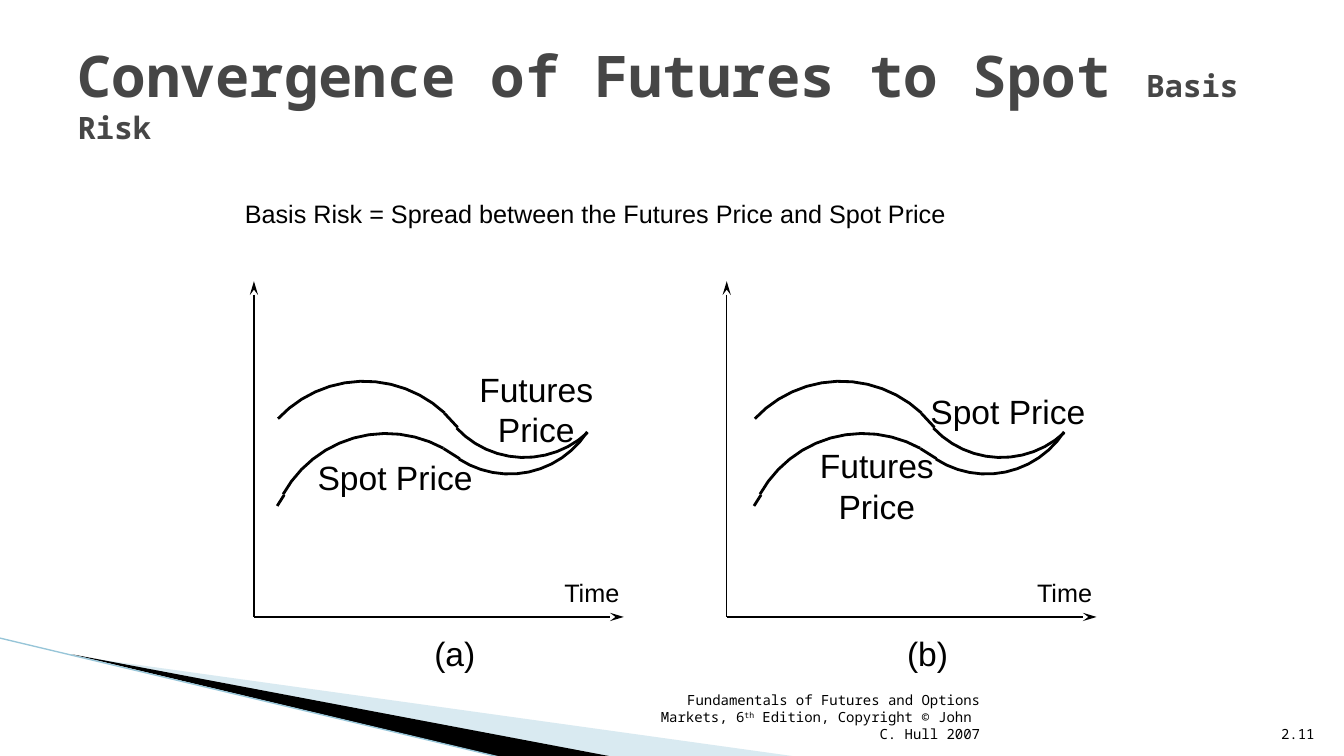
from math import cos, pi, sin
from lxml.etree import SubElement
from pptx import Presentation
from pptx.dml.color import RGBColor
from pptx.enum.shapes import MSO_CONNECTOR as Link
from pptx.enum.text import MSO_ANCHOR as Anchor, MSO_AUTO_SIZE as Fit, PP_ALIGN as Align
from pptx.oxml.ns import qn
from pptx.util import Pt

BLACK = RGBColor(0x00, 0x00, 0x00)
GREY = RGBColor(0x46, 0x46, 0x46)
PALE = RGBColor(0xA0, 0xCB, 0xDC)
TEAL = RGBColor(0x97, 0xC5, 0xD8)
SANS = "Arial"
MONO = "Noto Sans Mono"

ARCS = [
    (18, 54, 84.2, 313, True),
    (141.8, 73.4, 66.2, 47, False),
    (19.4, 93.6, 84.2, 299, True),
    (142.6, 84.2, 66.2, 33, False),
]
JOINS = [
    (119.5, 94.3, 128.9, 104.4),
    (118.8, 119.5, 130.3, 126.7),
    (5, 152.6, 0, 160.5),
]


def add_run(para, text, size, font=SANS, color=BLACK, bold=False):
    run = para.add_run()
    run.text = text
    run.font.size = Pt(size)
    run.font.name = font
    run.font.bold = bold
    run.font.color.rgb = color
    return run


def add_text(slide, box, lines, size, align=Align.LEFT, font=SANS, wrap=False, anchor=Anchor.TOP):
    frame = slide.shapes.add_textbox(*map(Pt, box)).text_frame
    frame.word_wrap = wrap
    frame.vertical_anchor = anchor
    if anchor == Anchor.TOP:
        frame.auto_size = Fit.SHAPE_TO_FIT_TEXT
    for i, line in enumerate(lines):
        para = frame.add_paragraph() if i else frame.paragraphs[0]
        para.alignment = align
        add_run(para, line, size, font)
    return frame


def add_line(shapes, start, end, color, width, arrow=None):
    line = shapes.add_connector(Link.STRAIGHT, *map(Pt, start + end))
    line.line.color.rgb = color
    line.line.width = Pt(width)
    if arrow:
        SubElement(line.line._get_or_add_ln(), qn(arrow), type="stealth", w="med", len="lg")
    SubElement(line._element.spPr, qn("a:effectLst"))


def add_path(shapes, points, closed):
    points = [(Pt(x), Pt(y)) for x, y in points]
    pen = shapes.build_freeform(*points[0])
    pen.add_line_segments(points[1:], close=closed)
    shape = pen.convert_to_shape()
    shape.shadow.inherit = False
    return shape


def add_arc(shapes, left, top, size, turn, crest, steps=12):
    points = []
    for i in range(steps + 1):
        angle = i / steps * pi / 2
        rise = size * cos(angle)
        points.append((left + size * sin(angle), top + (size - rise if crest else rise)))
    arc = add_path(shapes, points, False)
    arc.rotation = turn
    arc.fill.background()
    arc.line.color.rgb = BLACK
    arc.line.width = Pt(2)


def draw_decor(slide, box):
    left, top, width, height = box
    base = top + height
    wedges = [
        (PALE, 40, (52.6, 72.2), 571, 437.8),
        (BLACK, 100, (51.1, 73.4), 438.5, 357.1),
    ]
    for color, alpha, (x, rise), far, near in wedges:
        points = [(left + x, base - rise), (left + far, base), (left + near, base)]
        wedge = add_path(slide.shapes, points, True)
        wedge.fill.solid()
        wedge.fill.fore_color.rgb = color
        wedge.line.fill.background()
        if alpha < 100:
            tint = wedge._element.spPr.find(qn("a:solidFill"))[0]
            SubElement(tint, qn("a:alpha"), val=str(alpha * 1000))
    add_line(slide.shapes, (left, top), (left + 356.4, base), TEAL, 0.95)


def draw_title(slide, box):
    title = slide.shapes.title
    title.left, title.top, title.width, title.height = map(Pt, box)
    frame = title.text_frame
    frame.auto_size = Fit.NONE
    frame.word_wrap = True
    frame.vertical_anchor = Anchor.MIDDLE
    para = frame.paragraphs[0]
    para.alignment = Align.LEFT
    add_run(para, "Convergence of Futures to Spot ", 41, MONO, GREY, True)
    add_run(para, "Basis Risk", 22, MONO, GREY, True)


def draw_panel(slide, box, shift, mark, labels):
    left, top, width, height = box
    base = top + height
    add_line(slide.shapes, (left, top), (left, base), BLACK, 1, "a:headEnd")
    add_line(slide.shapes, (left, base), (left + width, base), BLACK, 1, "a:tailEnd")
    add_text(slide, (left + 214.6, base - 31.7, 54.7, 28.8), ["Time"], 18)
    add_text(slide, (left + 121.7, base + 7.9, 44.6, 36.7), [mark], 24)
    shapes = slide.shapes.add_group_shape().shapes
    start = left + shift
    for x, y, size, turn, crest in ARCS:
        add_arc(shapes, start + x, top + y, size, turn, crest)
    for x, y, far, low in JOINS:
        add_line(shapes, (start + x, top + y), (start + far, top + low), BLACK, 2)
    for (x, y, wide, high), lines in labels:
        add_text(slide, (left + x, top + y, wide, high), lines, 24, Align.CENTER)


def draw_footer(slide, box):
    left, top, width, height = box
    note = add_text(slide, (left, top, 247, height),
                    ["Fundamentals of Futures and Options Markets, 6"], 10,
                    Align.RIGHT, MONO, True, Anchor.BOTTOM)
    para = note.paragraphs[0]
    power = add_run(para, "th", 10, MONO)
    power._r.get_or_add_rPr().set("baseline", "30000")
    add_run(para, " Edition, Copyright © John ", 10, MONO)
    para.add_line_break()
    add_run(para, "C. Hull 2007", 10, MONO)
    add_text(slide, (left + width - 38.2, top, 38.2, height), ["2.11"], 10,
             Align.RIGHT, MONO, False, Anchor.BOTTOM)


def main():
    deck = Presentation()
    deck.slide_width, deck.slide_height = Pt(960), Pt(540)
    slide = deck.slides.add_slide(deck.slide_layouts[5])
    draw_decor(slide, (0, 455.8, 960, 84.9))
    draw_title(slide, (48.2, 21.6, 864, 90))
    add_text(slide, (167.8, 138.2, 588.2, 28.8),
             ["Basis Risk = Spread between the Futures Price and Spot Price"], 18, wrap=True)
    future, spot = ["Futures", "Price"], ["Spot Price"]
    panels = [
        (181.4, 16.6, "(a)", [((153.4, 59, 96.5, 65.5), future), ((37.5, 121.7, 126.7, 36.7), spot)]),
        (519.1, 19.5, "(b)", [((59, 113.7, 96.5, 65.5), future), ((137.5, 74.9, 126.7, 36.7), spot)]),
    ]
    for left, shift, mark, labels in panels:
        draw_panel(slide, (left, 200.9, 264.2, 239.8), shift, mark, labels)
    draw_footer(slide, (460.1, 504.7, 486, 28.8))
    deck.save("out.pptx")


if __name__ == "__main__":
    main()
